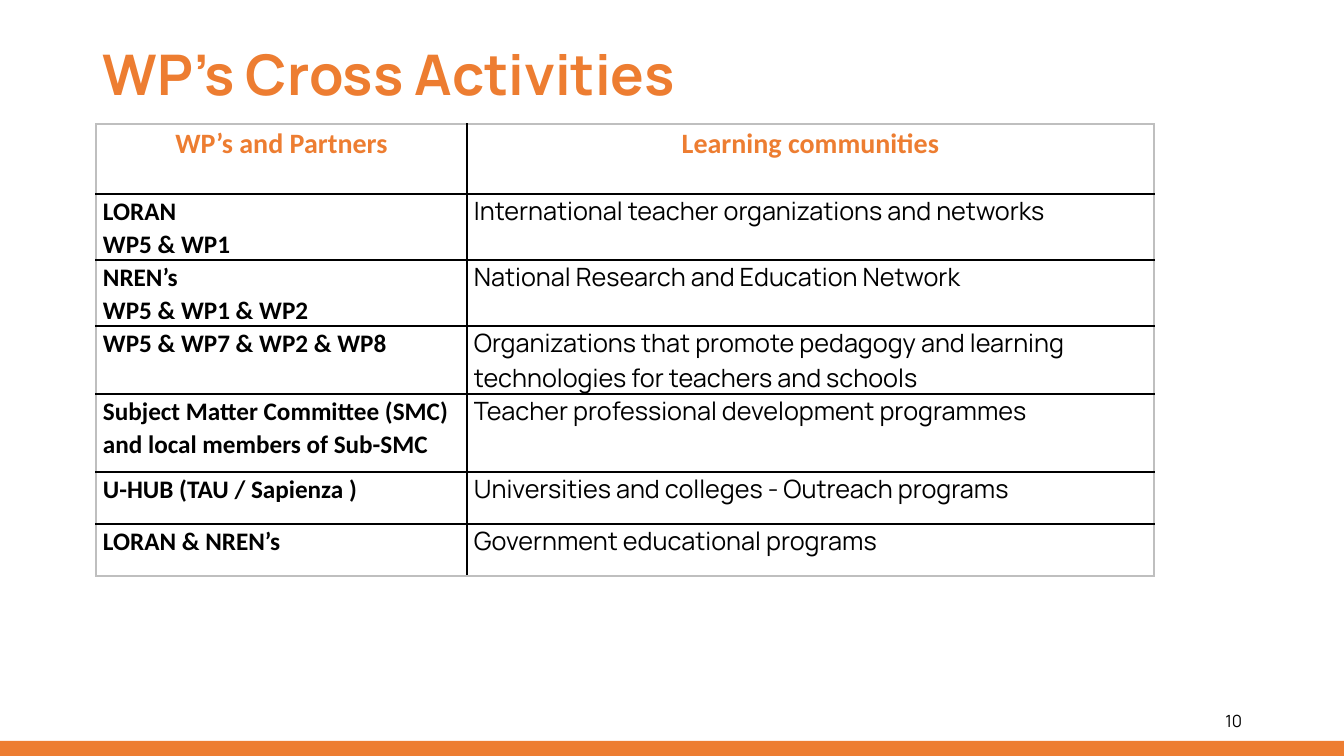
from lxml.etree import SubElement
from pptx import Presentation
from pptx.dml.color import RGBColor
from pptx.enum.shapes import MSO_SHAPE
from pptx.enum.text import MSO_ANCHOR, PP_ALIGN
from pptx.oxml.ns import qn
from pptx.util import Emu, Pt

SLIDE_W, SLIDE_H = 1344, 756
SCALE = 12192000 / SLIDE_W
COLORS = {"accent": "ED7D31", "ink": "000000", "frame": "BFBFBF"}
COLUMN_WIDTHS = [371, 687]
ROW_HEIGHTS = [70, 66, 66, 68, 78, 52, 52]
ACTIVITIES = [
    (["WP’s and Partners"], "Learning communities"),
    (["LORAN", "WP5 & WP1"], "International teacher organizations and networks"),
    (["NREN’s", "WP5 & WP1 & WP2"], "National Research and Education Network"),
    (["WP5 & WP7 & WP2 & WP8"],
     "Organizations that promote pedagogy and learning technologies for teachers and schools"),
    (["Subject Matter Committee (SMC) and local members of Sub-SMC"],
     "Teacher professional development programmes"),
    (["U-HUB (TAU / Sapienza )"], "Universities and colleges - Outreach programs"),
    (["LORAN & NREN’s"], "Government educational programs"),
]


def px(length):
    """Turn a length in px into EMU."""
    return Emu(round(length * SCALE))


def color(name):
    """Look up a named colour."""
    return RGBColor.from_string(COLORS[name])


def write(frame, lines, size, face, ink, bold=False, align=PP_ALIGN.LEFT, spacing=1.0):
    """Fill a text frame with one paragraph per line."""
    frame.text = "\n".join(lines)
    frame.word_wrap = True
    for paragraph in frame.paragraphs:
        paragraph.alignment = align
        paragraph.line_spacing = spacing
        paragraph.font.size = Pt(size)
        paragraph.font.name = face
        paragraph.font.bold = bold
        paragraph.font.color.rgb = color(ink)


def add_label(slide, box, text, size, ink, **style):
    """Place a vertically centred line of text in the box."""
    frame = slide.shapes.add_textbox(*map(px, box)).text_frame
    write(frame, [text], size, "Manrope", ink, **style)
    frame.vertical_anchor = MSO_ANCHOR.MIDDLE


def add_footer(slide, box):
    """Draw the footer band with the page number above its right end."""
    left, top, width, height = box
    band = slide.shapes.add_shape(MSO_SHAPE.RECTANGLE, *map(px, box))
    band.shadow.inherit = False
    band.fill.solid()
    band.fill.fore_color.rgb = color("accent")
    band.line.fill.background()
    number_box = (left + width - 394, top - 40, 302, 40)
    add_label(slide, number_box, "10", 12, "ink", align=PP_ALIGN.RIGHT)


def set_borders(cell, outer_sides):
    """Rule a cell in black, with grey on the sides that frame the table."""
    properties = cell._tc.get_or_add_tcPr()
    for side in "LRTB":
        rule = SubElement(properties, qn(f"a:ln{side}"), w=str(Pt(1)))
        fill = SubElement(rule, qn("a:solidFill"))
        name = "frame" if side in outer_sides else "ink"
        SubElement(fill, qn("a:srgbClr"), val=COLORS[name])


def add_activities(slide, left, top):
    """Build the table of partners and learning communities."""
    last_row, last_column = len(ROW_HEIGHTS) - 1, len(COLUMN_WIDTHS) - 1
    size = (sum(COLUMN_WIDTHS), sum(ROW_HEIGHTS))
    table = slide.shapes.add_table(last_row + 1, last_column + 1,
                                   *map(px, (left, top, *size))).table
    table.first_row = table.horz_banding = False
    for column, width in zip(table.columns, COLUMN_WIDTHS):
        column.width = px(width)
    for r, (partners, community) in enumerate(ACTIVITIES):
        table.rows[r].height = px(ROW_HEIGHTS[r])
        for c, lines in enumerate((partners, [community])):
            cell = table.cell(r, c)
            cell.margin_left = cell.margin_right = px(7)
            cell.margin_top = cell.margin_bottom = 0
            edges = {"L": c == 0, "R": c == last_column, "T": r == 0, "B": r == last_row}
            set_borders(cell, [side for side, outer in edges.items() if outer])
            cell.fill.background()
            if r == 0:
                write(cell.text_frame, lines, 20, "Calibri", "accent", True,
                      PP_ALIGN.CENTER, 1.07)
            elif c == 0:
                write(cell.text_frame, lines, 18, "Calibri", "ink", True, spacing=1.07)
            else:
                write(cell.text_frame, lines, 18, "Manrope", "ink")


def main():
    """Build the slide and save it."""
    deck = Presentation()
    deck.slide_width, deck.slide_height = px(SLIDE_W), px(SLIDE_H)
    slide = deck.slides.add_slide(deck.slide_layouts[6])
    add_footer(slide, (0, SLIDE_H - 15, SLIDE_W, 15))
    add_label(slide, (93, 27, 1016, 101), "WP’s Cross Activities", 40, "accent",
              bold=True, spacing=0.9)
    add_activities(slide, 96, 124)
    deck.save("out.pptx")


if __name__ == "__main__":
    main()
